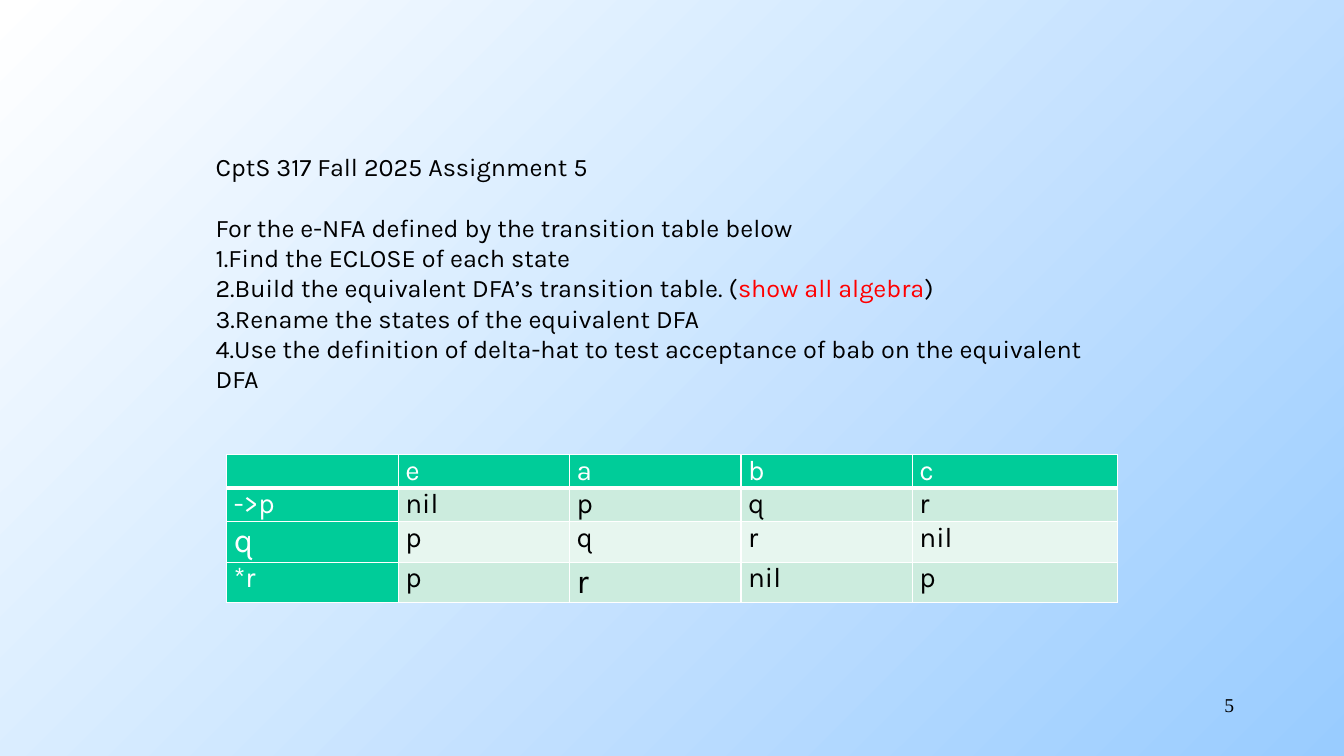
from lxml.etree import SubElement
from pptx import Presentation
from pptx.dml.color import RGBColor
from pptx.enum.text import MSO_ANCHOR as Anchor, PP_ALIGN as Align
from pptx.oxml import parse_xml
from pptx.oxml.ns import nsdecls, qn
from pptx.util import Inches, Pt

BLACK, WHITE, RED = "000000", "FFFFFF", "FF0000"
GREEN, MINT, PALE_MINT = "00CC99", "CCECDE", "E7F6EF"
BODY_FONT, NUMBER_FONT = "Karla", "Times New Roman"
TASKS = [
    [("Find the ECLOSE of each state", BLACK)],
    [("Build the equivalent DFA’s transition table. (", BLACK),
     ("show all algebra", RED), (")", BLACK)],
    [("Rename the states of the equivalent DFA", BLACK)],
    [("Use the definition of delta-hat to test acceptance of bab on the equivalent DFA", BLACK)],
]
TRANSITIONS = [
    ["", "e", "a", "b", "c"],
    ["->p", "nil", "p", "q", "r"],
    ["q", "p", "q", "r", "nil"],
    ["*r", "p", "r", "nil", "p"],
]
COLUMN_WIDTHS = [1.7, 1.7, 1.7, 1.7, 2.03]
ROW_HEIGHTS = [0.33, 0.33, 0.4, 0.4]
LARGE_CELLS = {(2, 0), (3, 2)}


def color(value):
    """Turn a hex string into a colour."""
    return RGBColor.from_string(value)


def add_run(paragraph, text, size, ink=BLACK, font=BODY_FONT):
    """Add one formatted run to a paragraph."""
    run = paragraph.add_run()
    run.text = text
    run.font.size = Pt(size)
    run.font.name = font
    run.font.color.rgb = color(ink)


def paint_background(slide):
    """Fill the slide with a diagonal white to blue gradient."""
    fill = slide.background.fill
    fill.gradient()
    fill.gradient_angle = 315
    for stop, value in zip(fill.gradient_stops, [WHITE, "99CCFF"]):
        stop.color.rgb = color(value)


def add_assignment(slide, left, top, width, height):
    """Write the title, the introduction and the numbered tasks."""
    shape = slide.shapes.add_textbox(Inches(left), Inches(top), Inches(width), Inches(height))
    frame = shape.text_frame
    frame.word_wrap = True
    frame.vertical_anchor = Anchor.MIDDLE
    frame.margin_top = 0
    frame.margin_bottom = Inches(0.58)
    add_run(frame.paragraphs[0], "CptS 317 Fall 2025 Assignment 5", 18)
    introduction = frame.add_paragraph()
    introduction.space_before = Pt(21.6)
    add_run(introduction, "For the e-NFA defined by the transition table below", 18)
    for task in TASKS:
        paragraph = frame.add_paragraph()
        properties = paragraph._p.get_or_add_pPr()
        properties.set("marL", "0")
        properties.set("indent", "0")
        SubElement(properties, qn("a:buAutoNum"), type="arabicPeriod")
        for text, ink in task:
            add_run(paragraph, text, 18, ink)


def set_borders(cell, bottom):
    """Draw white borders, with the bottom one at the given points."""
    properties = cell._tc.get_or_add_tcPr()
    for index, (side, points) in enumerate([("L", 1), ("R", 1), ("T", 1), ("B", bottom)]):
        properties.insert(index, parse_xml(
            f'<a:ln{side} {nsdecls("a")} w="{Pt(points)}"><a:solidFill>'
            f'<a:srgbClr val="{WHITE}"/></a:solidFill></a:ln{side}>'))


def add_transition_table(slide, left, top):
    """Build the transition table with its header row and state column."""
    table = slide.shapes.add_table(
        len(ROW_HEIGHTS), len(COLUMN_WIDTHS), Inches(left), Inches(top),
        Inches(sum(COLUMN_WIDTHS)), Inches(sum(ROW_HEIGHTS))).table
    for column, width in zip(table.columns, COLUMN_WIDTHS):
        column.width = Inches(width)
    for row, height in zip(table.rows, ROW_HEIGHTS):
        row.height = Inches(height)
    for row_index, values in enumerate(TRANSITIONS):
        for column_index, value in enumerate(values):
            cell = table.cell(row_index, column_index)
            heading = row_index == 0 or column_index == 0
            band = MINT if row_index % 2 else PALE_MINT
            cell.margin_left = cell.margin_right = Inches(0.07)
            cell.margin_top = cell.margin_bottom = 0
            cell.fill.solid()
            cell.fill.fore_color.rgb = color(GREEN if heading else band)
            set_borders(cell, 3 if row_index == 0 else 1)
            if value:
                size = 24 if (row_index, column_index) in LARGE_CELLS else 20
                add_run(cell.text_frame.paragraphs[0], value, size, WHITE if heading else BLACK)


def add_page_number(slide, left, top, width, height):
    """Write the page number at the right of its box."""
    shape = slide.shapes.add_textbox(Inches(left), Inches(top), Inches(width), Inches(height))
    shape.text_frame.word_wrap = True
    paragraph = shape.text_frame.paragraphs[0]
    paragraph.alignment = Align.RIGHT
    add_run(paragraph, "5", 14, font=NUMBER_FONT)


def main():
    """Build the assignment slide and save it."""
    presentation = Presentation()
    presentation.slide_width = Inches(13.33)
    presentation.slide_height = Inches(7.5)
    slide = presentation.slides.add_slide(presentation.slide_layouts[6])
    paint_background(slide)
    add_page_number(slide, 9.56, 6.83, 2.78, 0.5)
    add_transition_table(slide, 2.25, 4.51)
    add_assignment(slide, 2.04, 1.63, 9.25, 2.73)
    presentation.save("out.pptx")


if __name__ == "__main__":
    main()
